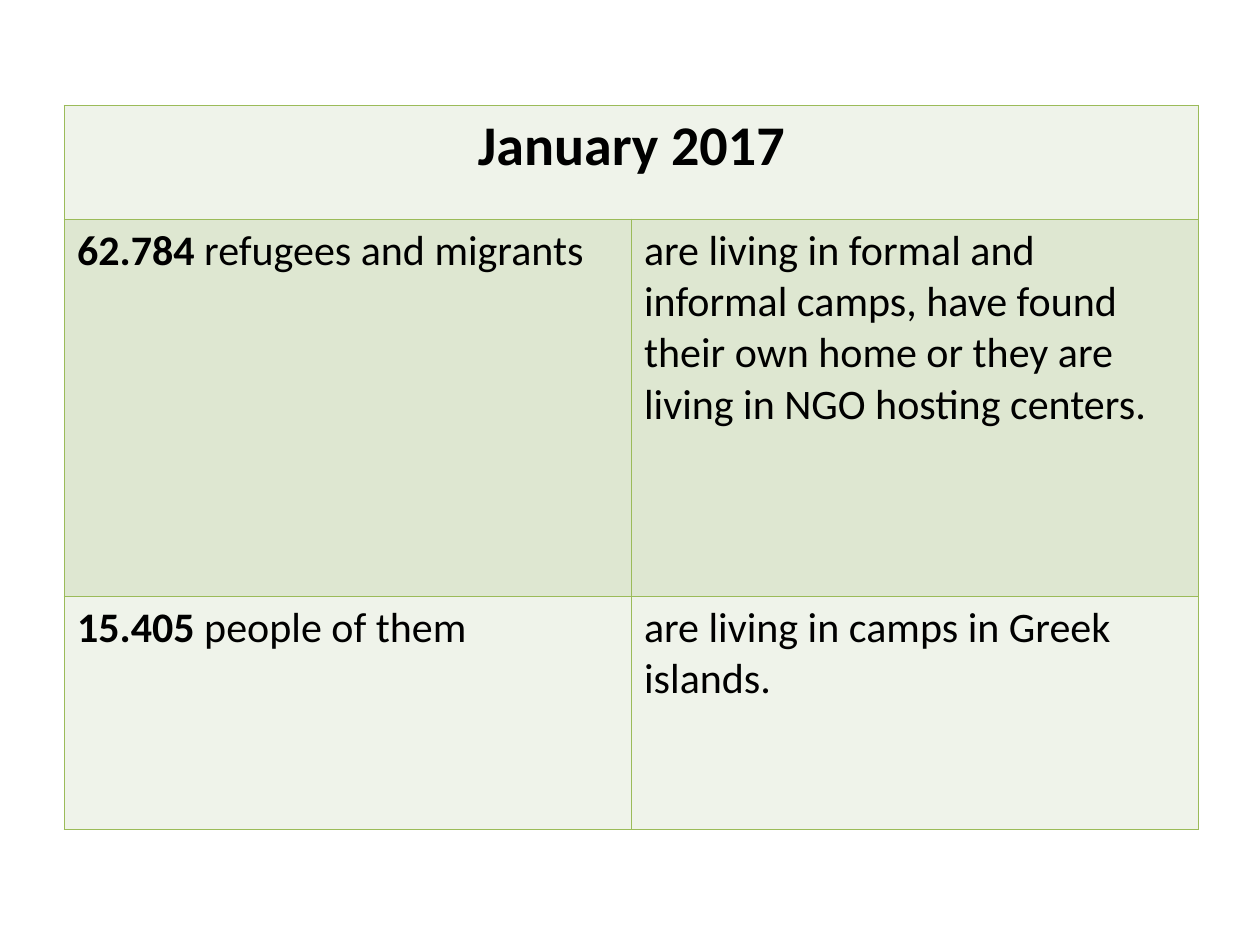
import dataclasses

import lxml.etree
import pptx
import pptx.dml.color
import pptx.enum.text
import pptx.oxml.ns
import pptx.util

Cm = pptx.util.Cm
Pt = pptx.util.Pt
RGB = pptx.dml.color.RGBColor.from_string


@dataclasses.dataclass(frozen=True)
class Theme:
    font: str = "Calibri"
    text: str = "000000"
    border: str = "9BBB59"
    light_band: str = "EFF3EA"
    dark_band: str = "DEE7D1"
    heading_size: int = 32
    body_size: int = 24
    border_width: int = 1


class SlideBuilder:
    def __init__(self, slide, theme):
        self.slide = slide
        self.theme = theme

    def table(self, left, top, column_widths, row_heights):
        frame = self.slide.shapes.add_table(
            len(row_heights), len(column_widths), Cm(left), Cm(top),
            Cm(sum(column_widths)), Cm(sum(row_heights)))
        for column, width in zip(frame.table.columns, column_widths):
            column.width = Cm(width)
        for row, height in zip(frame.table.rows, row_heights):
            row.height = Cm(height)
        for index, row in enumerate(frame.table.rows):
            band = self.theme.dark_band if index % 2 else self.theme.light_band
            for cell in row.cells:
                cell.fill.solid()
                cell.fill.fore_color.rgb = RGB(band)
                self.borders(cell)
        return frame.table

    def borders(self, cell):
        """Line all four sides; the schema wants the lines before the fill."""
        properties = cell._tc.get_or_add_tcPr()
        qn = pptx.oxml.ns.qn
        for position, side in enumerate(("a:lnL", "a:lnR", "a:lnT", "a:lnB")):
            line = lxml.etree.Element(qn(side), w=str(Pt(self.theme.border_width)))
            fill = lxml.etree.SubElement(line, qn("a:solidFill"))
            lxml.etree.SubElement(fill, qn("a:srgbClr"), val=self.theme.border)
            properties.insert(position, line)

    def cell_text(self, cell, size, bold="", regular="", align=None):
        """Write a bold lead followed by regular text."""
        paragraph = cell.text_frame.paragraphs[0]
        paragraph.alignment = align
        for text, is_bold in ((bold, True), (regular, False)):
            if text:
                run = paragraph.add_run()
                run.text = text
                run.font.name = self.theme.font
                run.font.size = Pt(size)
                run.font.bold = is_bold
                run.font.color.rgb = RGB(self.theme.text)


def main():
    presentation = pptx.Presentation()
    presentation.slide_width = Cm(25.4)
    presentation.slide_height = Cm(19.05)
    blank_layout = presentation.slide_layouts[6]
    theme = Theme()
    builder = SlideBuilder(presentation.slides.add_slide(blank_layout), theme)

    figures = builder.table(1.3, 2.13, [11.43, 11.43], [2.29, 7.6, 4.7])
    heading = figures.cell(0, 0)
    heading.merge(figures.cell(0, 1))
    builder.cell_text(heading, theme.heading_size, bold="January 2017",
                      align=pptx.enum.text.PP_ALIGN.CENTER)

    statements = [
        ("62.784", " refugees and migrants",
         "are living in formal and informal camps, have found their own home "
         "or they are living in NGO hosting centers."),
        ("15.405", " people of them", "are living in camps in Greek islands."),
    ]
    for row, (count, group, situation) in enumerate(statements, start=1):
        builder.cell_text(figures.cell(row, 0), theme.body_size, count, group)
        builder.cell_text(figures.cell(row, 1), theme.body_size, regular=situation)

    presentation.save("out.pptx")


if __name__ == "__main__":
    main()
